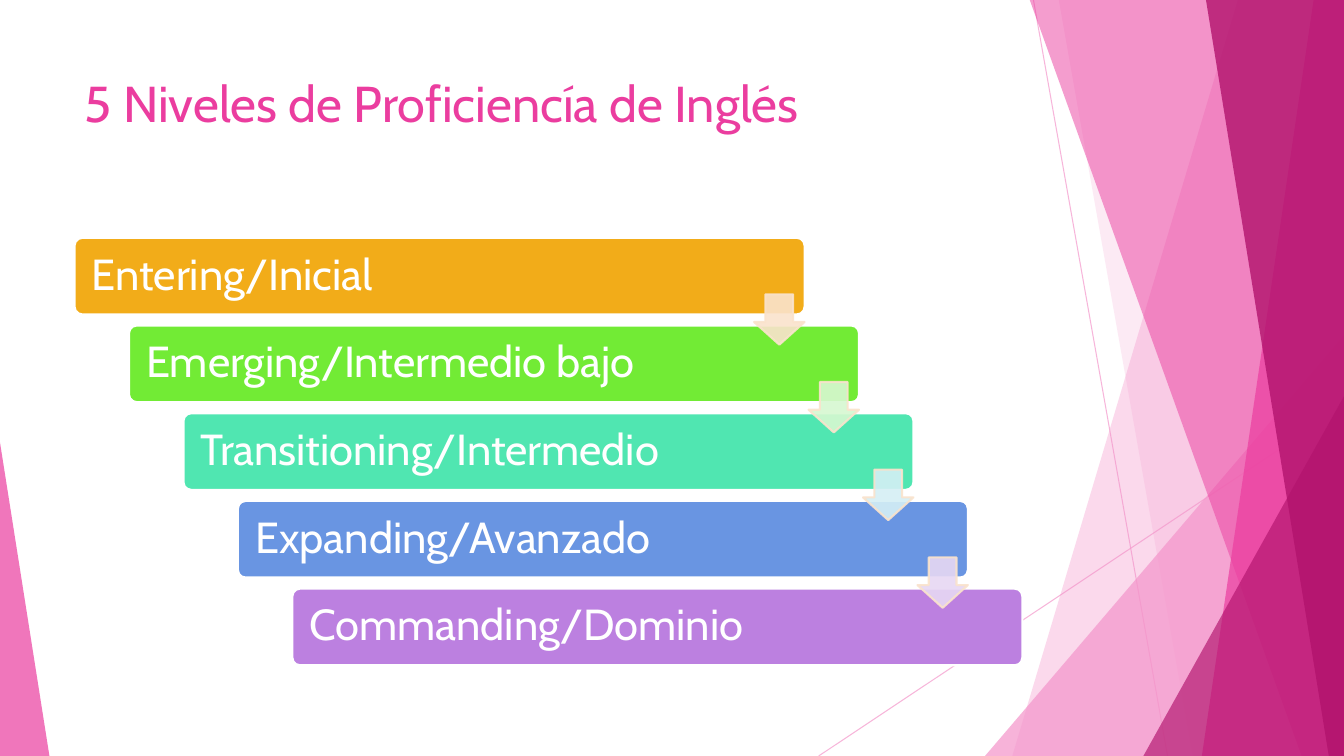
"""Build the slide with the five levels of English proficiency."""
from pptx import Presentation
from pptx import util as u
from pptx.dml.color import RGBColor
from pptx.enum import shapes, text
from pptx.oxml.ns import qn
from lxml import etree

PX = 9144
WIDTH, HEIGHT = 1333, 750
FONT = "Cabin"
COLORS = {
    "white": "FFFFFF", "light_pink": "F496CB", "pink": "EB3D9F", "dark_pink": "B2136D",
    "orange": "F2AC19", "green": "72EB35", "teal": "50E6B1", "blue": "6995E2", "purple": "BC80E0",
    "peach": "FAE3CC", "pale_green": "D7F8D1", "pale_blue": "D5EFF5", "pale_purple": "E7D8F3",
}


def paint(shape, fill, opacity=100, line=None):
    """Fill and outline a shape, with one opacity for both."""
    shape.shadow.inherit = False
    shape.fill.solid()
    shape.fill.fore_color.rgb = RGBColor.from_string(COLORS[fill])
    if line:
        shape.line.color.rgb = RGBColor.from_string(COLORS[line])
        shape.line.width = u.Pt(1.5)
    else:
        shape.line.fill.background()
    set_opacity(shape, opacity)


def set_opacity(shape, opacity):
    """Give every colour of a shape the same opacity in percent."""
    if opacity < 100:
        for color in shape._element.spPr.iter(qn("a:srgbClr")):
            etree.SubElement(color, qn("a:alpha"), val=str(opacity * 1000))


presentation = Presentation()
presentation.slide_width = WIDTH * PX
presentation.slide_height = HEIGHT * PX
slide = presentation.slides.add_slide(presentation.slide_layouts[5])

thin_lines = [(1025, 0, 1158, 750), (1333, 403, 812, 750)]
for ends in thin_lines:
    connector = slide.shapes.add_connector(
        shapes.MSO_CONNECTOR.STRAIGHT, *(end * PX for end in ends))
    connector.line.color.rgb = RGBColor.from_string(COLORS["light_pink"])
    connector.line.width = u.Pt(0.75)
    set_opacity(connector, 70)
    etree.SubElement(connector._element.spPr, qn("a:effectLst"))

# Bands: top left, bottom right start, bottom left; triangles: box and apex.
facets = [
    ("band", (1228, 1333, 1004), "light_pink", 36),
    ("band", (1050, 1333, 1183), "light_pink", 20),
    ("triangle", (977, 333, 356, 417, 1), "light_pink", 72),
    ("band", (1021, 1333, 1291), "pink", 50),
    ("band", (1303, 1333, 1192), "pink", 70),
    ("band", (1196, 1333, 1318), "dark_pink", 80),
    ("triangle", (1134, 393, 199, 357, 1), "dark_pink", 66),
    ("triangle", (0, 439, 49, 311, 0), "pink", 70),
]
for kind, geometry, color, opacity in facets:
    if kind == "band":
        top_left, right, bottom_left = geometry
        builder = slide.shapes.build_freeform(top_left, -1, scale=PX)
        builder.add_line_segments([(right, -1), (right, HEIGHT), (bottom_left, HEIGHT)])
        facet = builder.convert_to_shape()
    else:
        *box, apex = geometry
        facet = slide.shapes.add_shape(
            shapes.MSO_SHAPE.ISOSCELES_TRIANGLE, *(length * PX for length in box))
        facet.adjustments[0] = apex
    paint(facet, color, opacity)

title = slide.shapes.title
title.left, title.top, title.width, title.height = (n * PX for n in (74, 67, 940, 144))
title.text_frame.text = "5 Niveles de Proficiencía de Inglés"
title.text_frame.word_wrap = True
title.text_frame.auto_size = text.MSO_AUTO_SIZE.NONE
title.text_frame.vertical_anchor = text.MSO_ANCHOR.TOP
paragraph = title.text_frame.paragraphs[0]
paragraph.alignment = text.PP_ALIGN.LEFT
font = paragraph.runs[0].font
font.name, font.size = FONT, u.Pt(36)
font.color.rgb = RGBColor.from_string(COLORS["pink"])

levels = [
    ("Entering/Inicial", "orange"),
    ("Emerging/Intermedio bajo", "green"),
    ("Transitioning/Intermedio", "teal"),
    ("Expanding/Avanzado", "blue"),
    ("Commanding/Dominio", "purple"),
]
STEP_X, STEP_Y = 54, 87
for index, (label, color) in enumerate(levels):
    bar = slide.shapes.add_shape(
        shapes.MSO_SHAPE.ROUNDED_RECTANGLE,
        (74 + index * STEP_X) * PX, (236 + index * STEP_Y) * PX, 724 * PX, 76 * PX)
    bar.adjustments[0] = 0.1
    paint(bar, color, line="white")
    frame = bar.text_frame
    frame.text = label
    frame.word_wrap = True
    frame.vertical_anchor = text.MSO_ANCHOR.MIDDLE
    frame.margin_left = 15 * PX
    frame.margin_right = frame.margin_top = frame.margin_bottom = 13 * PX
    paragraph = frame.paragraphs[0]
    paragraph.alignment = text.PP_ALIGN.LEFT
    paragraph.line_spacing = 0.9
    font = paragraph.runs[0].font
    font.name, font.size = FONT, u.Pt(31)
    font.color.rgb = RGBColor.from_string(COLORS["white"])

for index, color in enumerate(["peach", "pale_green", "pale_blue", "pale_purple"]):
    arrow = slide.shapes.add_shape(
        shapes.MSO_SHAPE.DOWN_ARROW,
        (748 + index * STEP_X) * PX, (292 + index * STEP_Y) * PX, 50 * PX, 50 * PX)
    arrow.adjustments[0], arrow.adjustments[1] = 0.55, 0.45
    paint(arrow, color, 90, "peach")

presentation.save("out.pptx")
